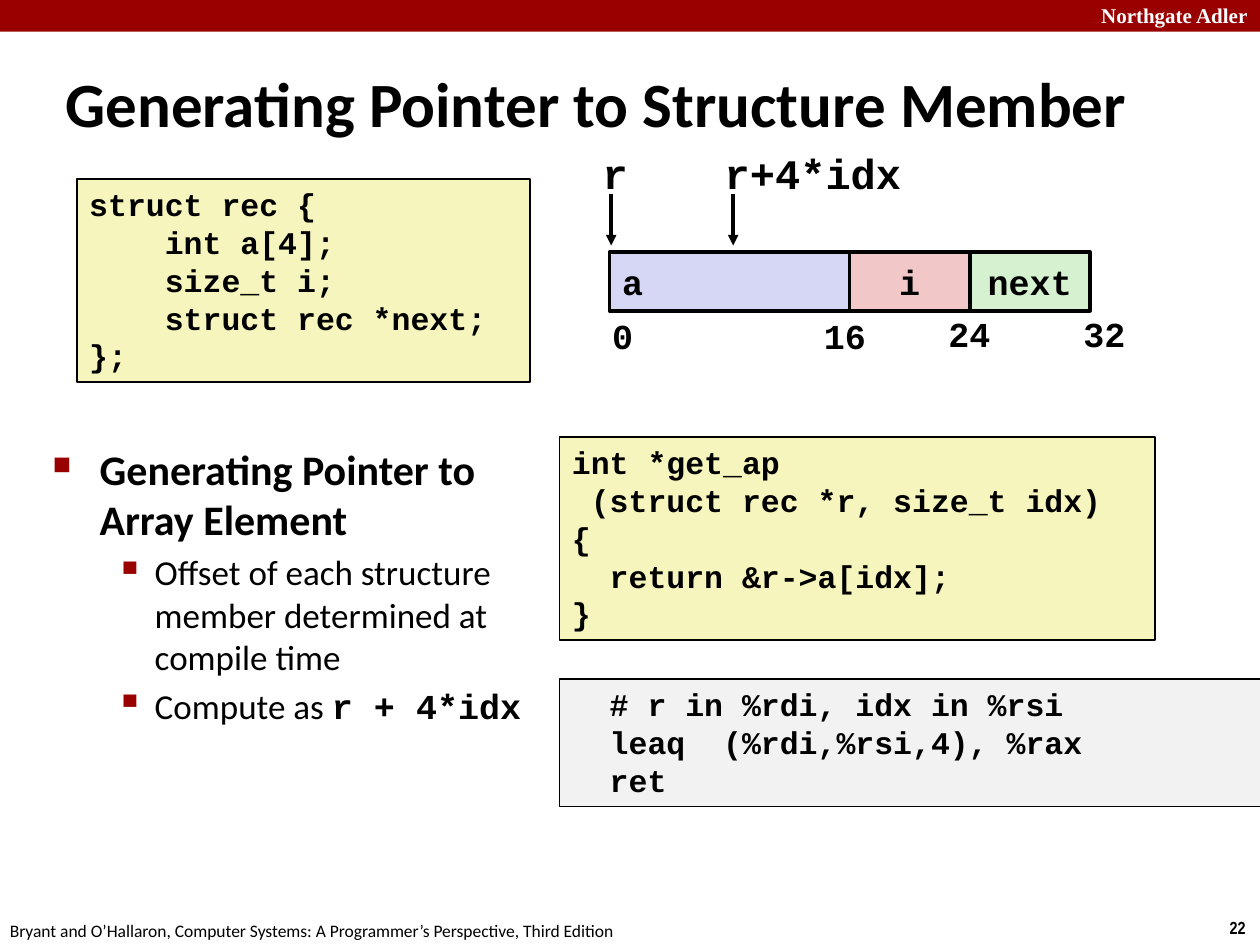
from lxml.etree import SubElement
from pptx import Presentation
from pptx.dml.color import RGBColor
from pptx.enum.shapes import MSO_CONNECTOR, MSO_SHAPE
from pptx.enum.text import MSO_ANCHOR, MSO_AUTO_SIZE, PP_ALIGN
from pptx.oxml.ns import qn
from pptx.util import Cm, Pt

BLACK = RGBColor(0x00, 0x00, 0x00)
WHITE = RGBColor(0xFF, 0xFF, 0xFF)
RED = RGBColor(0x99, 0x00, 0x00)
YELLOW = RGBColor(0xF6, 0xF5, 0xBD)
GRAY = RGBColor(0xF2, 0xF2, 0xF2)
BLUE = RGBColor(0xD6, 0xD6, 0xF5)
PINK = RGBColor(0xF1, 0xC7, 0xC7)
GREEN = RGBColor(0xD5, 0xF1, 0xCF)
CODE_FONT, TEXT_FONT = "Courier New", "Calibri"

TITLE = "Generating Pointer to Structure Member"

# text, (left, top, width, height) in cm, font, size, bold, colour
MARGIN_TEXTS = [
    ("Northgate Adler", (21.95, -0.08, 3.63, 0.76), "Times New Roman", 12, True, WHITE),
    ("22", (24.54, 18.36, 0.86, 0.69), "Arial Narrow", 10, True, BLACK),
    ("Bryant and O’Hallaron, Computer Systems: A Programmer’s Perspective, Third Edition",
     (-0.05, 18.42, 12.9, 0.69), TEXT_FONT, 10, False, BLACK),
]

# code, (left, top, width, height) in cm, fill
CODE_BOXES = [
    ("""struct rec {
    int a[4];
    size_t i;
    struct rec *next;
};""", (1.55, 3.61, 9.14, 4.09), YELLOW),
    ("""int *get_ap
 (struct rec *r, size_t idx)
{
  return &r->a[idx];
}""", (11.28, 8.81, 12.01, 4.09), YELLOW),
    ("""  # r in %rdi, idx in %rsi
  leaq  (%rdi,%rsi,4), %rax
  ret""", (11.28, 13.69, 14.15, 2.57), GRAY),
]

# level, plain text, trailing code
BULLETS = [
    (0, "Generating Pointer to Array Element", ""),
    (1, "Offset of each structure member determined at compile time", ""),
    (1, "Compute as ", "r + 4*idx"),
]
# size, bold, left margin in cm, hanging in cm, bullet, bullet size in percent
LEVELS = [(24, True, 0.95, 0.95, "■", 60), (20, False, 2.06, 0.79, "▪", 110)]

# name, first byte, end byte, fill, alignment
MEMBERS = [
    ("a", 0, 16, BLUE, PP_ALIGN.LEFT),
    ("i", 16, 24, PINK, PP_ALIGN.CENTER),
    ("next", 24, 32, GREEN, PP_ALIGN.CENTER),
]
MEMORY_LEFT, MEMORY_TOP, MEMORY_HEIGHT, BYTE_WIDTH = 12.29, 5.08, 1.19, 0.3025
# offset, left, top, width in cm
OFFSETS = [("0", 12.09, 6.22, 0.91), ("16", 16.36, 6.22, 1.37),
           ("24", 18.87, 6.17, 1.37), ("32", 21.59, 6.17, 1.37)]
# pointer, arrow position, label width in cm
POINTERS = [("r", 12.32, 1.02), ("r+4*idx", 14.78, 4.11)]


def place(shape, box):
    shape.left, shape.top, shape.width, shape.height = map(Cm, box)


def style(run, font, size, bold, color=BLACK):
    run.font.name = font
    run.font.size = Pt(size)
    run.font.bold = bold
    run.font.color.rgb = color


def write(shape, text, font, size, bold=True, color=BLACK,
          align=PP_ALIGN.LEFT, anchor=MSO_ANCHOR.TOP, wrap=False):
    frame = shape.text_frame
    frame.text = text
    frame.word_wrap = wrap
    frame.auto_size = MSO_AUTO_SIZE.NONE
    frame.vertical_anchor = anchor
    for paragraph in frame.paragraphs:
        paragraph.alignment = align
        for run in paragraph.runs:
            style(run, font, size, bold, color)


def add_label(slide, text, box, font, size, bold=True, color=BLACK):
    label = slide.shapes.add_textbox(*map(Cm, box))
    write(label, text, font, size, bold, color)


def add_box(slide, box, fill, line_width=None):
    shape = slide.shapes.add_shape(MSO_SHAPE.RECTANGLE, *map(Cm, box))
    shape.shadow.inherit = False
    shape.fill.solid()
    shape.fill.fore_color.rgb = fill
    if line_width:
        shape.line.color.rgb = BLACK
        shape.line.width = Pt(line_width)
    else:
        shape.line.fill.background()
    return shape


def add_down_arrow(slide, x, top, bottom):
    arrow = slide.shapes.add_connector(
        MSO_CONNECTOR.STRAIGHT, Cm(x), Cm(top), Cm(x), Cm(bottom))
    arrow.line.color.rgb = BLACK
    arrow.line.width = Pt(2)
    SubElement(arrow.line._get_or_add_ln(), qn("a:tailEnd"), type="triangle")
    SubElement(arrow._element.spPr, qn("a:effectLst"))


def set_bullet(paragraph, margin, hanging, character, percent):
    properties = paragraph._p.get_or_add_pPr()
    properties.set("marL", str(Cm(margin)))
    properties.set("indent", str(-Cm(hanging)))
    color = SubElement(properties, qn("a:buClr"))
    SubElement(color, qn("a:srgbClr"), val=str(RED))
    SubElement(properties, qn("a:buSzPct"), val=str(percent * 1000))
    SubElement(properties, qn("a:buChar"), char=character)


def add_bullets(slide, box):
    frame = slide.shapes.add_textbox(*map(Cm, box)).text_frame
    frame.word_wrap = True
    for index, (level, text, code) in enumerate(BULLETS):
        size, bold, *bullet = LEVELS[level]
        paragraph = frame.add_paragraph() if index else frame.paragraphs[0]
        paragraph.text = text
        paragraph.level = level
        paragraph.space_before = Pt(size * 0.2)
        style(paragraph.runs[0], TEXT_FONT, size, bold)
        if code:
            run = paragraph.add_run()
            run.text = code
            style(run, CODE_FONT, size, True)
        set_bullet(paragraph, *bullet)


def add_memory_layout(slide):
    for name, start, end, fill, align in MEMBERS:
        box = (MEMORY_LEFT + start * BYTE_WIDTH, MEMORY_TOP,
               (end - start) * BYTE_WIDTH, MEMORY_HEIGHT)
        write(add_box(slide, box, fill, 2), name, CODE_FONT, 20,
              align=align, anchor=MSO_ANCHOR.MIDDLE)
    for offset, left, top, width in OFFSETS:
        add_label(slide, offset, (left, top, width, 1.09), CODE_FONT, 20)
    for pointer, x, width in POINTERS:
        add_label(slide, pointer, (x - 0.42, 2.84, width, 1.27), CODE_FONT, 24)
        add_down_arrow(slide, x, 3.91, 4.95)


def main():
    presentation = Presentation()
    presentation.slide_width, presentation.slide_height = Cm(25.4), Cm(19.05)
    slide = presentation.slides.add_slide(presentation.slide_layouts[5])

    add_box(slide, (0, 0, 25.4, 0.64), RED)
    for margin_text in MARGIN_TEXTS:
        add_label(slide, *margin_text)

    title = slide.shapes.title
    place(title, (1.07, 1.27, 23.06, 1.6))
    write(title, TITLE, TEXT_FONT, 36, anchor=MSO_ANCHOR.MIDDLE, wrap=True)

    for code, box, fill in CODE_BOXES:
        write(add_box(slide, box, fill, 1), code, CODE_FONT, 18, wrap=True)
    add_bullets(slide, (0.81, 8.81, 10.9, 7.95))
    add_memory_layout(slide)
    presentation.save("out.pptx")


if __name__ == "__main__":
    main()
